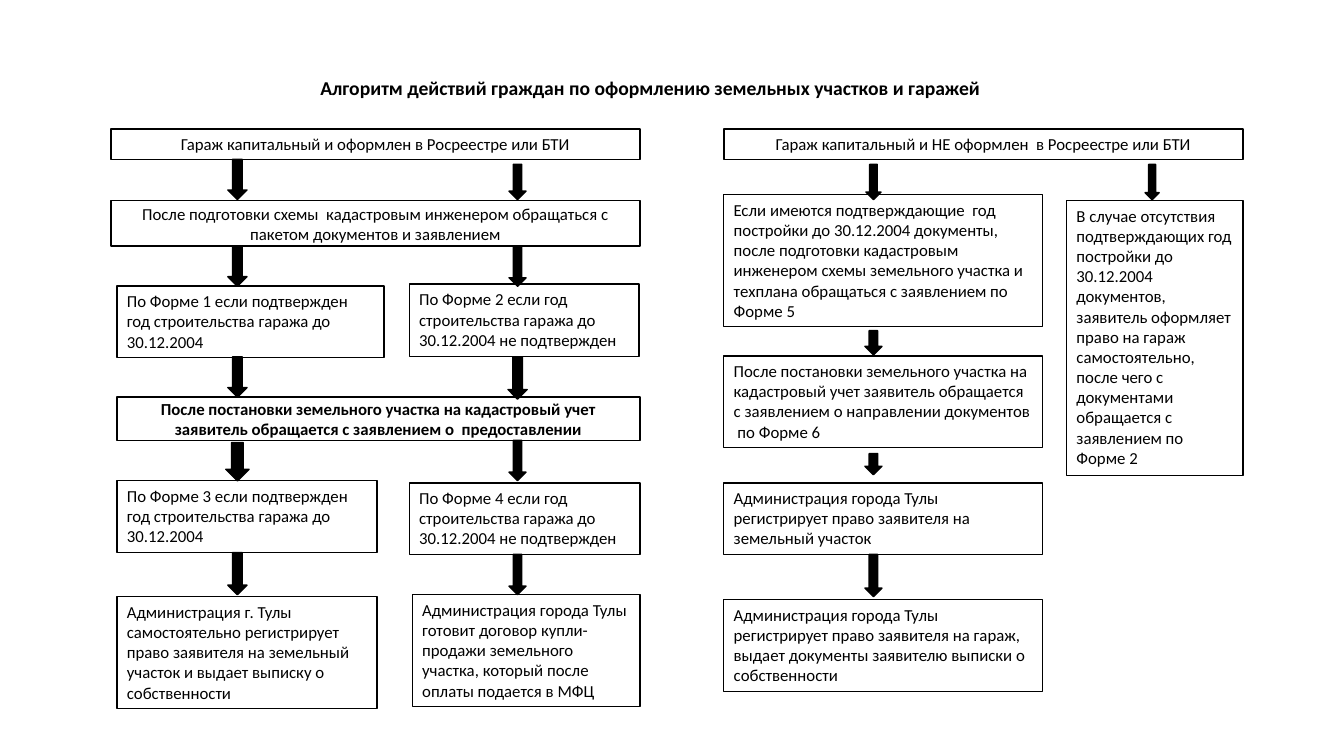
from dataclasses import dataclass

from pptx import Presentation
from pptx.dml.color import RGBColor as Rgb
from pptx.enum.shapes import MSO_SHAPE as Shape
from pptx.enum.text import MSO_ANCHOR as Anchor, MSO_AUTO_SIZE as Auto, PP_ALIGN as Align
from pptx.util import Pt


@dataclass(frozen=True)
class Theme:
    font: str = "Calibri"
    ink: Rgb = Rgb(0, 0, 0)
    paper: Rgb = Rgb(255, 255, 255)
    head: float = 14
    body: float = 12
    line: float = 1


theme = Theme()


def write(frame, text, size, bold=False, align=Align.LEFT, anchor=Anchor.TOP):
    frame.word_wrap = True
    frame.vertical_anchor = anchor
    para = frame.paragraphs[0]
    para.alignment = align
    run = para.add_run()
    run.text = text
    font = run.font
    font.name, font.size, font.bold = theme.font, Pt(size), bold
    font.color.rgb = theme.ink


def draw(kind, left, top, width, height, fill):
    shape = slide.shapes.add_shape(kind, Pt(left), Pt(top), Pt(width), Pt(height))
    shape.shadow.inherit = False
    shape.fill.solid()
    shape.fill.fore_color.rgb = fill
    shape.line.color.rgb = theme.ink
    shape.line.width = Pt(theme.line)
    return shape


deck = Presentation()
deck.slide_width, deck.slide_height = Pt(960), Pt(540)
slide = deck.slides.add_slide(deck.slide_layouts[5])

title = slide.shapes.title
title.left, title.top, title.width, title.height = Pt(152.6), Pt(50.4), Pt(624.2), Pt(24.2)
write(title.text_frame, "Алгоритм действий граждан по оформлению земельных участков и гаражей",
      theme.head, True, Align.CENTER)
title.text_frame.auto_size = Auto.NONE

# Wide boxes: left, top, width, height, anchor, bold, text
bands = [
    (79.2, 92.2, 378, 21.8, Anchor.TOP, False,
     "Гараж капитальный и оформлен в Росреестре или БТИ"),
    (79.2, 143.3, 378, 32.6, Anchor.MIDDLE, False,
     "После подготовки схемы  кадастровым инженером обращаться с пакетом документов и заявлением"),
    (83.5, 283.7, 373.7, 31, Anchor.MIDDLE, True,
     "После постановки земельного участка на кадастровый учет заявитель обращается "
     "с заявлением о  предоставлении"),
    (517, 92.2, 370.8, 21.8, Anchor.TOP, False,
     "Гараж капитальный и НЕ оформлен  в Росреестре или БТИ"),
]
for left, top, width, height, anchor, bold, text in bands:
    band = draw(Shape.RECTANGLE, left, top, width, height, theme.paper)
    write(band.text_frame, text, theme.body, bold, Align.CENTER, anchor)

# Step boxes: left, top, width, height, text
steps = [
    (83.5, 204.3, 190.8, 51.1,
     "По Форме 1 если подтвержден год строительства гаража до 30.12.2004"),
    (292.3, 203, 164.2, 51.8,
     "По Форме 2 если год строительства гаража до 30.12.2004 не подтвержден"),
    (83.5, 343.4, 185.8, 51.1,
     "По Форме 3 если подтвержден год строительства гаража до 30.12.2004"),
    (292.3, 344.9, 164.9, 51.1,
     "По Форме 4 если год строительства гаража до 30.12.2004 не подтвержден"),
    (83.5, 426.2, 185.8, 80,
     "Администрация г. Тулы самостоятельно регистрирует право заявителя "
     "на земельный участок и выдает выписку о собственности"),
    (294.5, 424.8, 162.7, 80,
     "Администрация города Тулы готовит договор купли-продажи земельного участка, "
     "который после оплаты подается в МФЦ"),
    (517, 139, 227.5, 94.3,
     "Если имеются подтверждающие  год  постройки до 30.12.2004 документы, "
     "после подготовки кадастровым инженером схемы земельного участка и техплана "
     "обращаться с заявлением по Форме 5"),
    (761.8, 143.3, 126, 196.6,
     "В случае отсутствия подтверждающих год постройки до 30.12.2004 документов, "
     "заявитель оформляет право на гараж самостоятельно, после чего с документами "
     "обращается с заявлением по Форме 2"),
    (517, 254.2, 227.5, 65.5,
     "После постановки земельного участка на кадастровый учет заявитель обращается "
     "с заявлением о направлении документов  по Форме 6"),
    (517, 344.9, 227.5, 51.1,
     "Администрация города Тулы регистрирует право заявителя на земельный участок"),
    (517, 428.4, 227.5, 65.5,
     "Администрация города Тулы регистрирует право заявителя на гараж, "
     "выдает документы заявителю выписки о собственности"),
]
for left, top, width, height, text in steps:
    step = draw(Shape.RECTANGLE, left, top, width, height, theme.paper)
    write(step.text_frame, text, theme.body)

# Arrows by column centre: top, width, height
arrows = {
    169.6: [(113.8, 13.7, 28.8), (175.7, 13.7, 28.8), (254.9, 13.7, 28.8),
            (316.1, 16.6, 27.4), (394.6, 13.7, 30.2)],
    369.7: [(117.4, 12.2, 25.2), (176.4, 12.2, 28.1), (254.9, 13.7, 30.2),
            (314.6, 12.2, 28.8), (396, 12.2, 28.8)],
    623.9: [(117.4, 10.8, 25.2), (236.2, 12.2, 17.3), (324, 12.2, 15.1), (396, 12.2, 30.2)],
    823: [(117.4, 10.1, 25.2)],
}
for centre, column in arrows.items():
    for top, width, height in column:
        draw(Shape.DOWN_ARROW, centre - width / 2, top, width, height, theme.ink)

deck.save("out.pptx")
